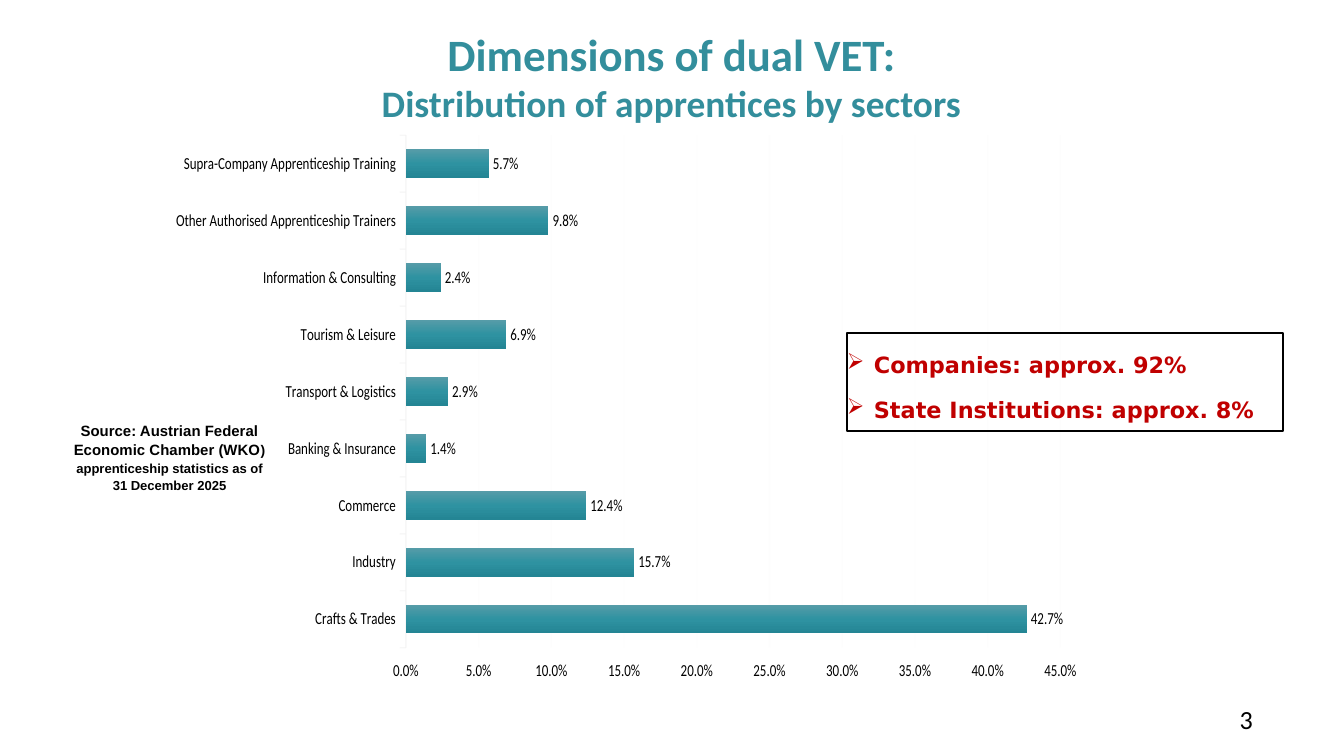
from dataclasses import dataclass

from lxml.etree import SubElement
from pptx import Presentation
from pptx.chart.data import CategoryChartData
from pptx.dml.color import RGBColor
from pptx.enum.chart import XL_CHART_TYPE as ChartType
from pptx.enum.chart import XL_LABEL_POSITION as LabelPosition
from pptx.enum.chart import XL_TICK_MARK as TickMark
from pptx.enum.shapes import MSO_SHAPE as Preset
from pptx.enum.text import MSO_ANCHOR as Anchor
from pptx.enum.text import PP_ALIGN as Align
from pptx.oxml import parse_xml
from pptx.oxml.ns import nsdecls, qn
from pptx.util import Emu, Pt

PX_PER_INCH = 134.4


@dataclass(frozen=True)
class Theme:
    black: str = "000000"
    title: str = "338E9C"
    accent: str = "C00000"
    grid: str = "F2F2F2"
    bar: tuple = ((0, "569CA8"), (50, "2E92A1"), (100, "248594"))
    heading_font: str = "Calibri"
    source_font: str = "Arial"
    bullet_font: str = "DejaVu Sans"
    title_size: float = 24
    subtitle_size: float = 20
    number_size: float = 14
    bullet_size: float = 12
    chart_size: float = 10
    label_size: float = 9
    source_sizes: tuple = (8, 7.5, 7)


THEME = Theme()

SECTORS = [
    ("Crafts & Trades", 0.427),
    ("Industry", 0.157),
    ("Commerce", 0.124),
    ("Banking & Insurance", 0.014),
    ("Transport & Logistics", 0.029),
    ("Tourism & Leisure", 0.069),
    ("Information & Consulting", 0.024),
    ("Other Authorised Apprenticeship Trainers", 0.098),
    ("Supra-Company Apprenticeship Training", 0.057),
]


def px(length):
    return Emu(round(length * 914400 / PX_PER_INCH))


def rgb(value):
    return RGBColor.from_string(value)


def style_font(font, name, color, size=None, bold=False):
    font.name = name
    font.color.rgb = rgb(color)
    font.bold = bold
    if size:
        font.size = Pt(size)


def set_margins(frame, margin):
    frame.margin_left = frame.margin_right = margin
    frame.margin_top = frame.margin_bottom = margin


def add_text(slide, box, lines, font, color, align, bold=False, wrap=True,
             anchor=Anchor.MIDDLE, spacing=None, margin=0):
    """One paragraph; each line is a list of (text, size) runs."""
    frame = slide.shapes.add_textbox(*map(px, box)).text_frame
    frame.word_wrap = wrap
    frame.vertical_anchor = anchor
    if margin is not None:
        set_margins(frame, margin)
    paragraph = frame.paragraphs[0]
    paragraph.alignment = align
    paragraph.line_spacing = spacing
    style_font(paragraph.font, font, color, bold=bold)
    for index, line in enumerate(lines):
        if index:
            paragraph.add_line_break()
        for text, size in line:
            run = paragraph.add_run()
            run.text = text
            run.font.size = Pt(size)


def add_bullet(paragraph, color, indent):
    properties = paragraph._p.get_or_add_pPr()
    properties.set("marL", str(indent))
    properties.set("indent", str(-indent))
    bullet_color = SubElement(properties, qn("a:buClr"))
    SubElement(bullet_color, qn("a:srgbClr")).set("val", color)
    SubElement(properties, qn("a:buChar")).set("char", "➢")


def add_bullet_box(slide, box, items):
    shape = slide.shapes.add_shape(Preset.RECTANGLE, *map(px, box))
    shape.shadow.inherit = False
    shape.fill.background()
    shape.line.color.rgb = rgb(THEME.black)
    shape.line.width = Pt(0.75)
    frame = shape.text_frame
    frame.word_wrap = True
    frame.vertical_anchor = Anchor.TOP
    set_margins(frame, 0)
    for index, item in enumerate(items):
        paragraph = frame.add_paragraph() if index else frame.paragraphs[0]
        paragraph.text = item
        paragraph.alignment = Align.LEFT
        paragraph.line_spacing = Pt(24)
        add_bullet(paragraph, THEME.accent, px(27))
        style_font(paragraph.font, THEME.bullet_font, THEME.accent,
                   THEME.bullet_size, True)
    paragraph.space_after = Pt(9)


def style_line(line, width, opacity):
    line.color.rgb = rgb(THEME.grid)
    line.width = Pt(width)
    color = line._ln.find(".//" + qn("a:srgbClr"))
    SubElement(color, qn("a:alpha")).set("val", str(opacity * 1000))


def fill_gradient(series, stops):
    marks = "".join(f'<a:gs pos="{position * 1000}"><a:srgbClr val="{color}"/></a:gs>'
                    for position, color in stops)
    gradient = parse_xml(f'<a:gradFill {nsdecls("a")} rotWithShape="1"><a:gsLst>{marks}'
                         '</a:gsLst><a:lin ang="5400000" scaled="0"/></a:gradFill>')
    series.format.fill.background()
    no_fill = series._element.spPr.find(qn("a:noFill"))
    no_fill.getparent().replace(no_fill, gradient)


def set_plot_layout(chart, x, y, w, h):
    plot_area = chart._chartSpace.chart.plotArea
    for old in plot_area.findall(qn("c:layout")):
        plot_area.remove(old)
    sizes = "".join(f'<c:{name} val="{value}"/>'
                    for name, value in zip("xywh", (x, y, w, h)))
    plot_area.insert(0, parse_xml(
        f'<c:layout {nsdecls("c")}><c:manualLayout><c:layoutTarget val="inner"/>'
        f'<c:xMode val="edge"/><c:yMode val="edge"/>{sizes}'
        '</c:manualLayout></c:layout>'))


def add_sector_chart(slide, box):
    data = CategoryChartData(number_format="0.0%")
    data.categories = [name for name, _ in SECTORS]
    data.add_series("Series 1", [share for _, share in SECTORS])
    chart = slide.shapes.add_chart(ChartType.BAR_CLUSTERED, *map(px, box), data).chart
    chart.has_legend = chart.has_title = False
    style_font(chart.font, THEME.heading_font, THEME.black, THEME.chart_size)
    set_plot_layout(chart, 0.002, 0.08, 0.856, 0.755)

    # Bars and their labels
    plot = chart.plots[0]
    plot.vary_by_categories = False
    plot.gap_width = 100
    fill_gradient(plot.series[0], THEME.bar)
    plot.has_data_labels = True
    labels = plot.data_labels
    labels.show_value = True
    labels.position = LabelPosition.OUTSIDE_END

    # Axes
    category_axis, value_axis = chart.category_axis, chart.value_axis
    style_line(category_axis.format.line, 1, 54)
    category_axis.has_major_gridlines = False
    value_axis.format.line.fill.background()
    style_line(value_axis.major_gridlines.format.line, 0.75, 10)
    value_axis.minimum_scale, value_axis.maximum_scale = 0, 0.45
    value_axis.major_unit = 0.05
    for axis in (category_axis, value_axis):
        axis.major_tick_mark = TickMark.OUTSIDE
        style_font(axis.tick_labels.font, THEME.heading_font, THEME.black, THEME.label_size)
    for numbers in (labels, value_axis.tick_labels):
        numbers.number_format = "0.0%"
        numbers.number_format_is_linked = False
    style_font(labels.font, THEME.heading_font, THEME.black, THEME.label_size)


def main():
    presentation = Presentation()
    presentation.slide_width, presentation.slide_height = px(1344), px(756)
    slide = presentation.slides.add_slide(presentation.slide_layouts[6])

    # Slide number and title
    add_text(slide, (1133, 704, 120, 30), [[("3", THEME.number_size)]],
             THEME.heading_font, THEME.black, Align.RIGHT)
    add_text(slide, (74, 19, 1195, 122),
             [[("Dimensions of dual VET:", THEME.title_size)],
              [("Distribution of apprentices by sectors", THEME.subtitle_size)]],
             THEME.heading_font, THEME.title, Align.CENTER, bold=True,
             wrap=False, spacing=Pt(24))

    # Chart and its source
    add_sector_chart(slide, (176, 81, 993, 679))
    large, medium, small = THEME.source_sizes
    add_text(slide, (60, 413, 219, 87),
             [[("Source: Austrian Federal Economic Chamber (WKO", large), (")", medium)],
              [("apprenticeship statistics as of 31 December 2025", small)]],
             THEME.source_font, THEME.black, Align.CENTER, bold=True,
             anchor=Anchor.TOP, spacing=1.1, margin=None)

    # Key shares
    add_bullet_box(slide, (847, 333, 436, 98),
                   ["Companies: approx. 92%", "State Institutions: approx. 8%"])
    presentation.save("out.pptx")


if __name__ == "__main__":
    main()
